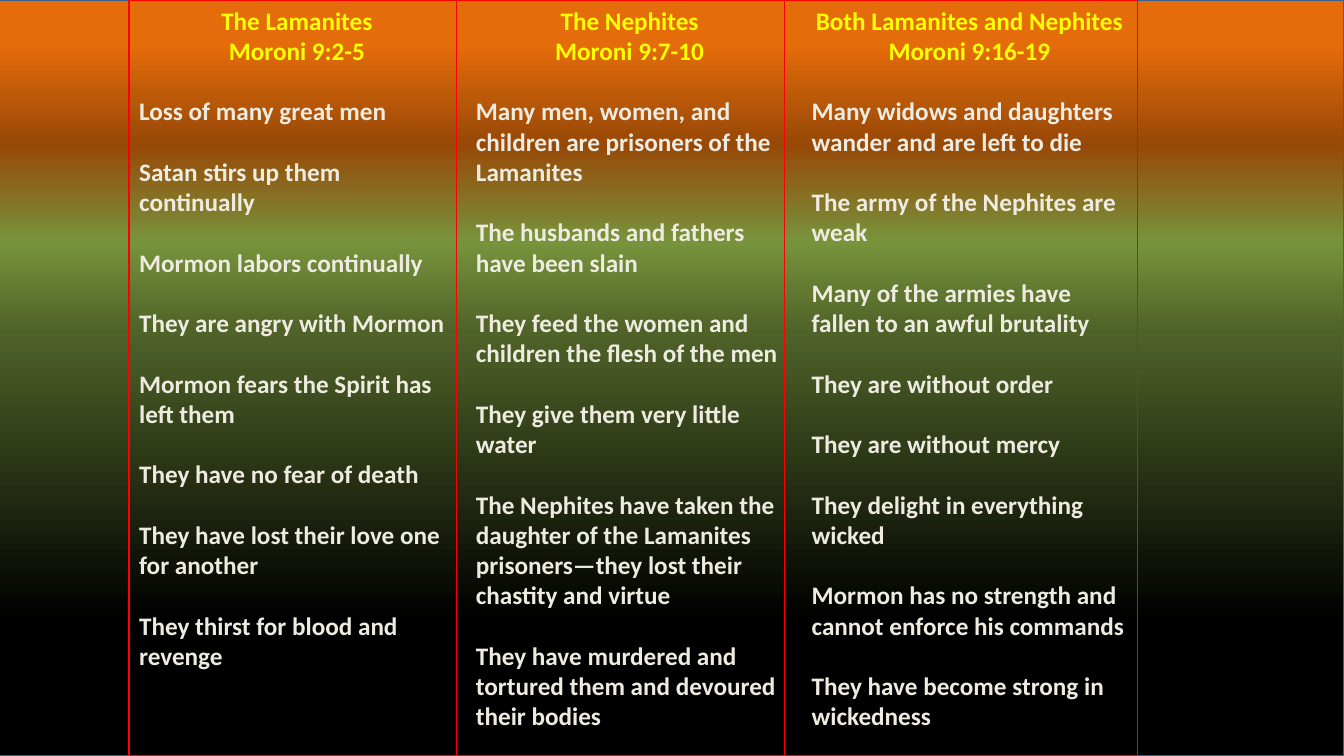
"""Build a three-column slide comparing the Lamanites and the Nephites in Moroni 9."""
from dataclasses import dataclass

from lxml.etree import SubElement
from pptx import Presentation
from pptx.dml.color import RGBColor
from pptx.enum.shapes import MSO_SHAPE
from pptx.enum.text import MSO_ANCHOR, MSO_AUTO_SIZE, PP_ALIGN
from pptx.oxml.ns import qn
from pptx.shapes.autoshape import Shape
from pptx.slide import Slide
from pptx.text.text import TextFrame
from pptx.util import Inches, Pt


@dataclass(frozen=True)
class Theme:
    font: str = "Calibri"
    size: float = 18
    item_gap: float = 21.6
    line_width: float = 1
    heading: str = "FFFF00"
    item: str = "EEECE1"
    frame: str = "FF0000"
    backdrop_edge: str = "3A5F8C"
    gradient: tuple[tuple[int, str], ...] = (
        (6, "E46C0A"), (19, "984807"), (32, "77933C"), (44, "4F6228"), (82, "000000"),
    )


@dataclass(frozen=True)
class Box:
    left: float
    width: float
    height: float = 7.5
    top: float = 0

    def placement(self) -> dict[str, int]:
        return {
            "left": Inches(self.left), "top": Inches(self.top),
            "width": Inches(self.width), "height": Inches(self.height),
        }


@dataclass(frozen=True)
class Column:
    placeholder: int
    text_box: Box
    frame: Box
    heading: tuple[str, str]
    items: tuple[str, ...]


THEME = Theme()
COLUMNS = (
    Column(
        1, Box(1.28, 3.33, 6.77), Box(1.28, 3.25),
        ("The Lamanites", "Moroni 9:2-5"),
        (
            "Loss of many great men",
            "Satan stirs up them continually",
            "Mormon labors continually",
            "They are angry with Mormon",
            "Mormon fears the Spirit has left them",
            "They have no fear of death",
            "They have lost their love one for another",
            "They thirst for blood and revenge",
        ),
    ),
    Column(
        2, Box(4.62, 3.25, 7.98), Box(4.53, 3.25),
        ("The Nephites", "Moroni 9:7-10"),
        (
            "Many men, women, and children are prisoners of the Lamanites",
            "The husbands and fathers have been slain",
            "They feed the women and children the flesh of the men",
            "They give them very little water",
            "The Nephites have taken the daughter of the Lamanites "
            "prisoners—they lost their chastity and virtue",
            "They have murdered and tortured them and devoured their bodies",
        ),
    ),
    Column(
        3, Box(7.95, 3.33, 7.37), Box(7.78, 3.5),
        ("Both Lamanites and Nephites", "Moroni 9:16-19"),
        (
            "Many widows and daughters wander and are left to die",
            "The army of the Nephites are weak",
            "Many of the armies have fallen to an awful brutality",
            "They are without order",
            "They are without mercy",
            "They delight in everything wicked",
            "Mormon has no strength and cannot enforce his commands",
            "They have become strong in wickedness",
        ),
    ),
)


def apply(target: object, values: dict[str, object]) -> None:
    for name, value in values.items():
        setattr(target, name, value)


def add_rectangle(slide: Slide, box: Box, edge: str) -> Shape:
    rectangle = slide.shapes.add_shape(MSO_SHAPE.RECTANGLE, **box.placement())
    rectangle.shadow.inherit = False
    rectangle.fill.background()
    rectangle.line.color.rgb = RGBColor.from_string(edge)
    rectangle.line.width = Pt(THEME.line_width)
    return rectangle


def add_backdrop(slide: Slide) -> None:
    backdrop = add_rectangle(slide, Box(-0.12, 13.45), THEME.backdrop_edge)
    backdrop.fill.gradient()
    backdrop.fill.gradient_angle = 270
    stops = backdrop.element.spPr.find(qn("a:gradFill")).find(qn("a:gsLst"))
    for stop in list(stops):
        stops.remove(stop)
    for percent, color in THEME.gradient:
        stop = SubElement(stops, qn("a:gs"), pos=str(percent * 1000))
        SubElement(stop, qn("a:srgbClr"), val=color)
    slide.placeholders[0].element.addprevious(backdrop.element)


def add_line(body: TextFrame, text: str, color: str, align: PP_ALIGN, gap: float) -> None:
    line = body.paragraphs[0] if not body.text else body.add_paragraph()
    line.text = text
    apply(line, {
        "alignment": align, "line_spacing": 1.0,
        "space_before": Pt(gap), "space_after": Pt(0),
    })
    apply(line.font, {"name": THEME.font, "size": Pt(THEME.size), "bold": True})
    line.font.color.rgb = RGBColor.from_string(color)
    properties = line._p.get_or_add_pPr()
    properties.set("marL", "0")
    properties.set("indent", "0")
    bullet = SubElement(properties, qn("a:buNone"))
    properties.find(qn("a:spcAft")).addnext(bullet)


def add_column(slide: Slide, column: Column) -> None:
    holder = slide.placeholders[column.placeholder]
    apply(holder, column.text_box.placement())
    body = holder.text_frame
    apply(body, {
        "word_wrap": True, "vertical_anchor": MSO_ANCHOR.TOP,
        "auto_size": MSO_AUTO_SIZE.SHAPE_TO_FIT_TEXT,
    })
    for text in column.heading:
        add_line(body, text, THEME.heading, PP_ALIGN.CENTER, 0)
    for text in column.items:
        add_line(body, text, THEME.item, PP_ALIGN.LEFT, THEME.item_gap)
    add_rectangle(slide, column.frame, THEME.frame)


def main() -> None:
    deck = Presentation()
    apply(deck, {"slide_width": Inches(13.33), "slide_height": Inches(7.5)})
    slide = deck.slides.add_slide(deck.slide_layouts.get_by_name("Comparison"))
    add_backdrop(slide)
    for column in COLUMNS:
        add_column(slide, column)
    for holder in list(slide.placeholders):
        if not holder.text_frame.text:
            holder.element.getparent().remove(holder.element)
    deck.save("out.pptx")


if __name__ == "__main__":
    main()
